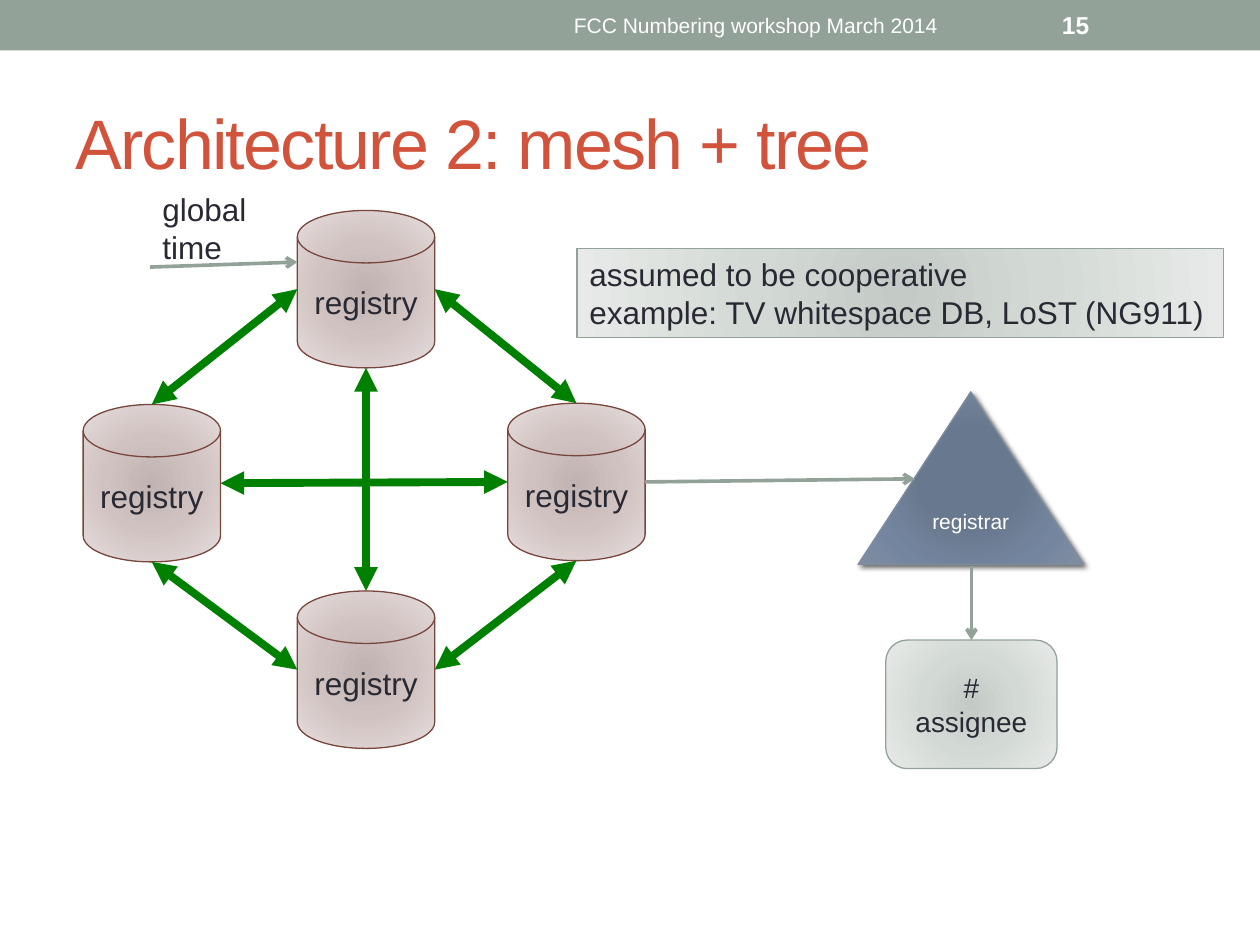
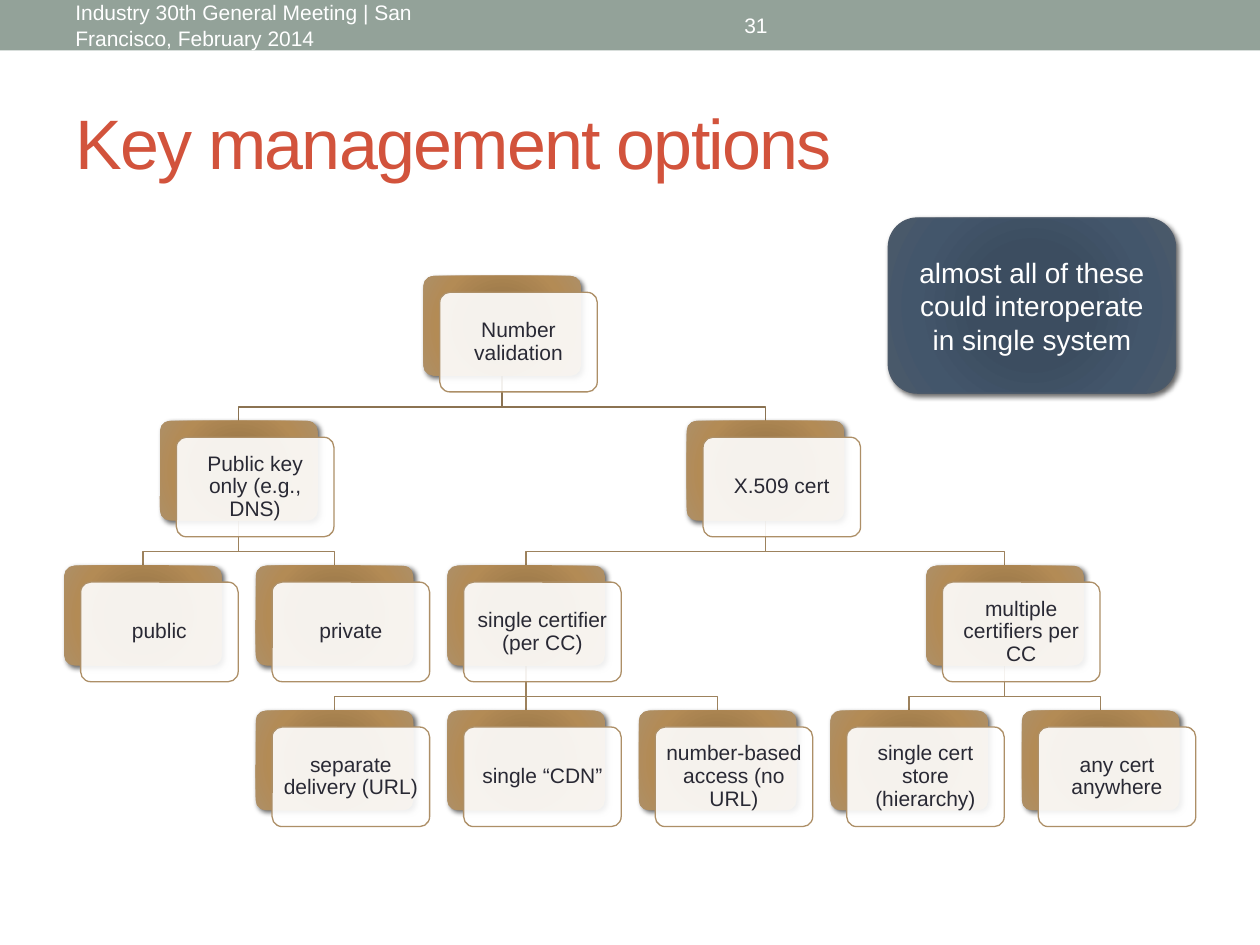
from pptx import Presentation
from pptx.dml.color import RGBColor
from pptx.enum.shapes import MSO_CONNECTOR, MSO_SHAPE
from pptx.enum.text import MSO_ANCHOR, PP_ALIGN
from pptx.oxml import parse_xml
from pptx.oxml.ns import nsdecls, qn
from pptx.util import Inches, Pt

FONT = "Arial"
COLORS = {
    "sage": "93A299", "title": "D2533C", "ink": "292934", "white": "FFFFFF",
    "mesh": "008000", "registry": "79463D", "registrar": "808DA0",
    "callout": "4C5A6A", "card": "AD8F67", "root_link": "8B7352", "link": "9D825D",
}
GRADIENTS = {
    "registry": [(0, "C0B3B1"), (45, "D0C2C0"), (100, "E5DEDD")],
    "sage": [(0, "C4CAC6"), (45, "D3DAD6"), (100, "E7EAE8")],
    "registrar": [(0, "677790"), (34, "68788E"), (70, "74869F"), (100, "808DA0")],
    "card": [(0, "A37D49"), (34, "A07C4C"), (70, "B38B55"), (100, "AD8F67")],
    "callout": [(0, "3B4D61"), (34, "3C4D60"), (70, "43566B"), (100, "4C5A6A")],
}
CARD_SIZE = (1.25, 0.79)
CARD_PITCH = (1.52, 1.15)
CARD_OFFSET = 0.13
ELBOW_DROP = 0.25
KEY_OPTIONS = ("Number validation", [
    ("Public key only (e.g., DNS)", [("public", 0), ("private", 1)]),
    ("X.509 cert", [
        ("single certifier (per CC)", [
            ("separate delivery (URL)", 1),
            ("single “CDN”", 2),
            ("number-based access (no URL)", 3)]),
        ("multiple certifiers per CC", [
            ("single cert store (hierarchy)", 4),
            ("any cert anywhere", 5)]),
    ]),
])


def rgb(name):
    """Return the named colour."""
    return RGBColor.from_string(COLORS[name])


def write(shape, text, size, color="ink", align=PP_ALIGN.LEFT,
          anchor=MSO_ANCHOR.MIDDLE, bold=False, margin=None, spacing=None):
    """Set the text of a shape and format all its runs."""
    frame = shape.text_frame
    frame.text = text
    frame.word_wrap = True
    frame.vertical_anchor = anchor
    if margin is not None:
        frame.margin_left = frame.margin_right = Inches(margin)
        frame.margin_top = frame.margin_bottom = Inches(margin)
    for paragraph in frame.paragraphs:
        paragraph.alignment = align
        paragraph.line_spacing = spacing
        for run in paragraph.runs:
            run.font.name = FONT
            run.font.size = Pt(size)
            run.font.bold = bold
            run.font.color.rgb = rgb(color)


def add_text(slide, box, text, size, **style):
    """Add a text box with formatted text."""
    label = slide.shapes.add_textbox(*map(Inches, box))
    write(label, text, size, **style)
    return label


def add_solid(slide, kind, box, fill, line=None):
    """Add a flat preset shape without shadow."""
    shape = slide.shapes.add_shape(kind, *map(Inches, box))
    shape.shadow.inherit = False
    shape.fill.solid()
    shape.fill.fore_color.rgb = rgb(fill)
    if line:
        shape.line.color.rgb = rgb(line)
        shape.line.width = Pt(0.75)
    else:
        shape.line.fill.background()
    return shape


def add_glow(slide, kind, box, tone, line=None, shadow=False):
    """Add a preset shape with a radial gradient and an optional shadow."""
    shape = add_solid(slide, kind, box, "white", line)
    stops = "".join(f'<a:gs pos="{pos * 1000}"><a:srgbClr val="{color}"/></a:gs>'
                    for pos, color in GRADIENTS[tone])
    properties = shape._element.spPr
    properties.replace(properties.find(qn("a:solidFill")), parse_xml(
        f'<a:gradFill {nsdecls("a")} rotWithShape="1"><a:gsLst>{stops}</a:gsLst>'
        '<a:path path="circle"><a:fillToRect l="100000" t="100000" r="100000" b="100000"/>'
        '</a:path></a:gradFill>'))
    if shadow:
        properties.find(qn("a:effectLst")).append(parse_xml(
            f'<a:outerShdw {nsdecls("a")} blurRad="{Pt(3)}" dist="{Pt(2)}" dir="2700000" '
            'rotWithShape="0"><a:srgbClr val="000000"><a:alpha val="60000"/></a:srgbClr>'
            '</a:outerShdw>'))
    return shape


def add_line(slide, start, end, color, width, head=None, tail=None):
    """Add a straight connector with optional arrowheads."""
    line = slide.shapes.add_connector(MSO_CONNECTOR.STRAIGHT, *map(Inches, (*start, *end)))
    line.line.color.rgb = rgb(color)
    line.line.width = Pt(width)
    for tag, arrow in (("headEnd", head), ("tailEnd", tail)):
        if arrow:
            line.line._get_or_add_ln().append(
                parse_xml(f'<a:{tag} {nsdecls("a")} type="{arrow}"/>'))
    line._element.spPr.append(parse_xml(f'<a:effectLst {nsdecls("a")}/>'))


def add_arrow(slide, start, end):
    """Add a thin sage arrow."""
    add_line(slide, start, end, "sage", 2.08, tail="arrow")


def add_frame(prs, title):
    """Add a slide with the top band and the title."""
    slide = prs.slides.add_slide(prs.slide_layouts[6])
    add_solid(slide, MSO_SHAPE.RECTANGLE, (0, 0, 10, 0.4), "sage")
    heading = add_text(slide, (0.5, 0.58, 9, 1.08), title, 40, color="title")
    heading.text_frame.paragraphs[0].runs[0].font._element.set("spc", "-100")
    return slide


def add_band_text(slide, left, width, text, size=12, **style):
    """Write white text in the top band."""
    add_text(slide, (left, 0.02, width, 0.36), text, size, color="white", **style)


def draw_mesh(slide, left, top):
    """Draw four registries joined in a mesh, and the global time feed."""
    width, height = 1.09, 1.25
    corners = {"west": (0, 1.54), "east": (3.37, 1.53), "north": (1.7, 0), "south": (1.7, 3.02)}
    sides = {"top": (0.5, 0), "left": (0, 0.5), "bottom": (0.5, 1), "right": (1, 0.5)}

    def at(registry, side):
        (x, y), (across, down) = corners[registry], sides[side]
        return left + x + across * width, top + y + down * height

    for x, y in corners.values():
        registry = add_glow(slide, MSO_SHAPE.FLOWCHART_MAGNETIC_DISK,
                            (left + x, top + y, width, height), "registry", "registry")
        write(registry, "registry", 18, align=PP_ALIGN.CENTER)
    for start, end in [
        (("west", "top"), ("north", "left")), (("north", "right"), ("east", "top")),
        (("west", "bottom"), ("south", "left")), (("south", "right"), ("east", "bottom")),
        (("south", "top"), ("north", "bottom")), (("west", "right"), ("east", "left")),
    ]:
        add_line(slide, at(*start), at(*end), "mesh", 4.5, "triangle", "triangle")
    add_arrow(slide, (left + 0.53, top + 0.45), (left + 1.7, top + 0.41))
    add_text(slide, (left + 0.53, top - 0.21, 0.88, 0.71), "global\ntime", 18,
             anchor=MSO_ANCHOR.TOP)
    return at("east", "right")


def draw_branch(slide, left, top, source):
    """Draw the registrar fed from the source point, and its assignee."""
    middle = left + 0.9
    registrar = add_glow(slide, MSO_SHAPE.FLOWCHART_EXTRACT, (left, top, 1.79, 1.37),
                         "registrar", "registrar", shadow=True)
    write(registrar, "registrar", 12, "white", PP_ALIGN.CENTER)
    assignee = add_glow(slide, MSO_SHAPE.FLOWCHART_ALTERNATE_PROCESS,
                        (left + 0.22, top + 1.97, 1.36, 1.02), "sage", "sage")
    write(assignee, "# assignee", 16, align=PP_ALIGN.CENTER)
    add_arrow(slide, source, (left + 0.45, top + 0.69))
    add_arrow(slide, (middle, top + 1.38), (middle, top + 1.97))


def place_tree(node, cards, links, level=0):
    """Collect cards and links by column and level; return the node's column."""
    label, below = node
    if isinstance(below, list):
        columns = [place_tree(child, cards, links, level + 1) for child in below]
        column = (columns[0] + columns[-1]) / 2
        links.extend((level, column, child) for child in columns)
    else:
        column = below
    cards.append((label, column, level))
    return column


def draw_link(slide, start, end, color):
    """Join a parent card to a child card by an elbow, or straight down."""
    if start[0] == end[0]:
        add_line(slide, start, end, color, 0.75)
        return
    bend = start[1] + ELBOW_DROP
    points = [start, (start[0], bend), (end[0], bend), end]
    corners = [tuple(map(Inches, point)) for point in points]
    builder = slide.shapes.build_freeform(*corners[0])
    builder.add_line_segments(corners[1:], close=False)
    elbow = builder.convert_to_shape()
    elbow.shadow.inherit = False
    elbow.fill.background()
    elbow.line.color.rgb = rgb(color)
    elbow.line.width = Pt(0.75)


def draw_card(slide, left, top, label):
    """Draw a brown card with a translucent white label card over it."""
    back = add_glow(slide, MSO_SHAPE.ROUNDED_RECTANGLE, (left, top, *CARD_SIZE),
                    "card", shadow=True)
    front = add_solid(slide, MSO_SHAPE.ROUNDED_RECTANGLE,
                      (left + CARD_OFFSET, top + CARD_OFFSET, *CARD_SIZE), "white", "card")
    back.adjustments[0] = front.adjustments[0] = 0.1
    white = front._element.spPr.find(qn("a:solidFill"))[0]
    white.append(parse_xml(f'<a:alpha {nsdecls("a")} val="90000"/>'))
    write(front, label, 12, align=PP_ALIGN.CENTER, margin=0.05, spacing=0.9)


def draw_tree(slide, left, top, tree):
    """Draw the option tree, links behind cards."""
    cards, links = [], []
    place_tree(tree, cards, links)
    width, height = CARD_SIZE

    def corner(column, level):
        return left + column * CARD_PITCH[0], top + level * CARD_PITCH[1]

    for level, parent, child in links:
        parent_x, parent_y = corner(parent, level)
        child_x, child_y = corner(child, level + 1)
        draw_link(slide, (parent_x + width / 2, parent_y + height),
                  (child_x + width / 2, child_y), "link" if level else "root_link")
    for label, column, level in cards:
        draw_card(slide, *corner(column, level), label)


def build_architecture(prs):
    """Build the mesh and tree architecture slide."""
    slide = add_frame(prs, "Architecture 2: mesh + tree")
    source = draw_mesh(slide, 0.66, 1.67)
    draw_branch(slide, 6.81, 3.11, source)
    remark = add_glow(slide, MSO_SHAPE.RECTANGLE, (4.58, 1.97, 5.13, 0.71), "sage", "sage")
    write(remark, "assumed to be cooperative\nexample: TV whitespace DB, LoST (NG911)", 18)
    add_band_text(slide, 3.75, 4.5, "FCC Numbering workshop March 2014", align=PP_ALIGN.CENTER)
    add_band_text(slide, 8.33, 1.17, "15", 14, bold=True)


def build_key_management(prs):
    """Build the key management options slide."""
    slide = add_frame(prs, "Key management options")
    draw_tree(slide, 0.51, 2.19, KEY_OPTIONS)
    callout = add_glow(slide, MSO_SHAPE.FLOWCHART_ALTERNATE_PROCESS, (7.05, 1.73, 2.28, 1.39),
                       "callout", "callout", shadow=True)
    write(callout, "almost all of these could interoperate in single system", 16,
          "white", PP_ALIGN.CENTER)
    add_band_text(slide, 0.5, 3.17, "Industry 30th General Meeting | San Francisco, February 2014")
    add_band_text(slide, 3.75, 4.5, "31", align=PP_ALIGN.CENTER)


def main():
    """Build and save the presentation."""
    prs = Presentation()
    prs.slide_width, prs.slide_height = Inches(10), Inches(7.5)
    build_architecture(prs)
    build_key_management(prs)
    prs.save("out.pptx")


if __name__ == "__main__":
    main()
